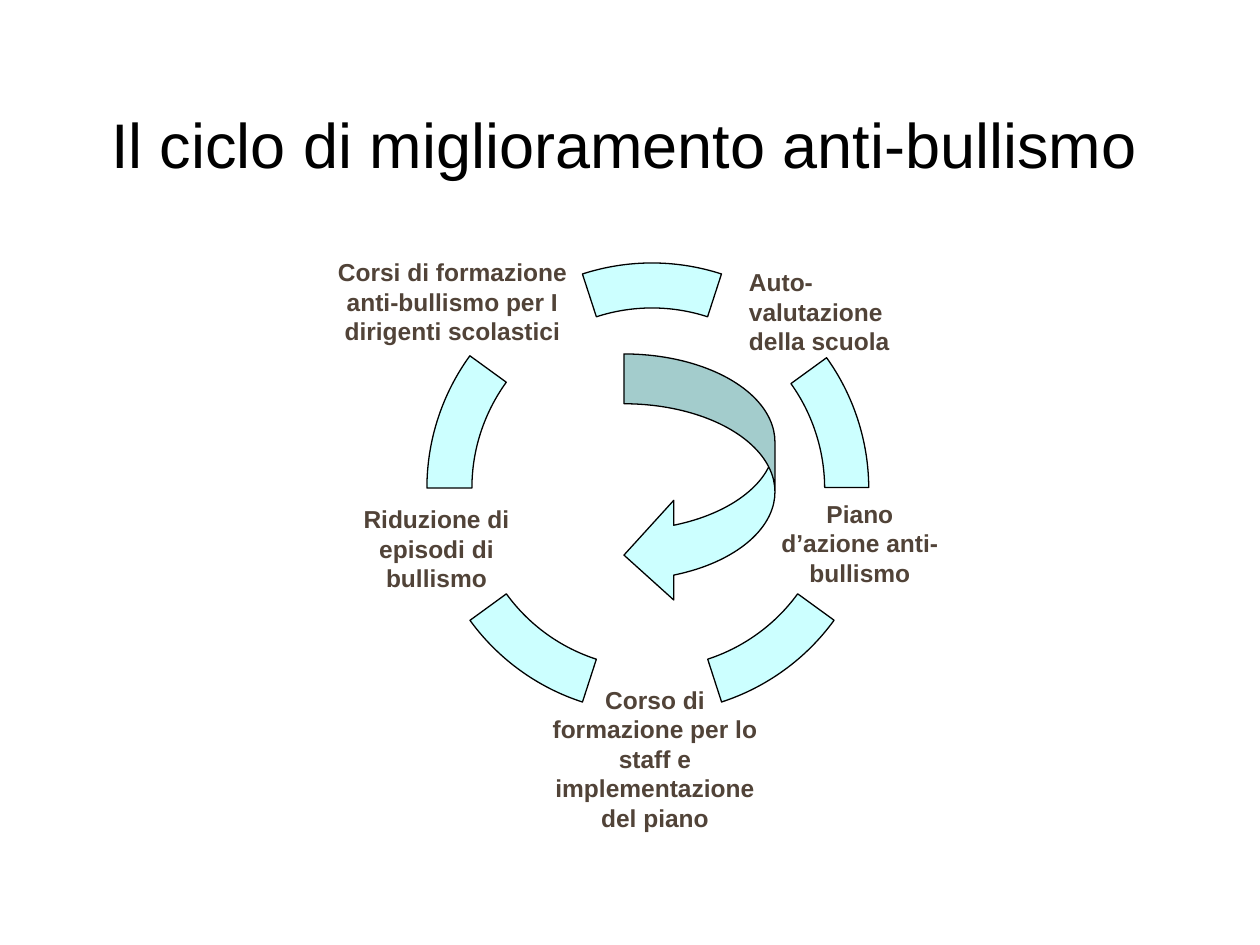
from pptx import Presentation
from pptx.dml.color import RGBColor
from pptx.enum.shapes import MSO_SHAPE
from pptx.enum.text import MSO_ANCHOR, PP_ALIGN
from pptx.util import Emu, Pt

PX = 914400 / 126
BLACK = RGBColor(0x00, 0x00, 0x00)
BROWN = RGBColor(0x51, 0x43, 0x38)
PALE_CYAN = RGBColor(0xCC, 0xFF, 0xFF)
BLOCK_ARC = MSO_SHAPE.BLOCK_ARC
CURVED_ARROW = MSO_SHAPE.CURVED_LEFT_ARROW
MIDDLE = MSO_ANCHOR.MIDDLE
LEFT, CENTER = PP_ALIGN.LEFT, PP_ALIGN.CENTER

ARC_START, ARC_END, ARC_THICKNESS = 252, 288, 0.1
ARC_STEP = 72
RING_BOX = (427, 263, 450, 450)
RIGHT_ARC_BOX = (425, 267, 446, 441)
ARC_BOXES = [RING_BOX, RIGHT_ARC_BOX, RING_BOX, RING_BOX, RING_BOX]

STAGES = [
    ("Auto-valutazione della scuola", (740, 277, 189, 69), LEFT),
    ("Corso di formazione per lo staff e implementazione del piano",
     (532, 723, 246, 71), CENTER),
    ("Corsi di formazione anti-bullismo per I dirigenti scolastici",
     (322, 263, 261, 77), CENTER),
    ("Piano d’azione anti-bullismo", (771, 484, 178, 118), CENTER),
    ("Riduzione di episodi di bullismo", (344, 510, 185, 77), CENTER),
]


def px(length):
    return Emu(round(length * PX))


def angle(degrees):
    """Convert degrees to the normalized value of an angle adjustment."""
    return degrees * 60000 / 100000


class CycleSlide:
    font = "Arial"
    line_width = Pt(0.75)

    def __init__(self, slide):
        self.shapes = slide.shapes

    def text(self, words, box, size, color, bold=False, align=CENTER, insets=(9, 5)):
        frame = self.shapes.add_textbox(*map(px, box)).text_frame
        frame.word_wrap = True
        frame.vertical_anchor = MIDDLE
        frame.margin_left = frame.margin_right = px(insets[0])
        frame.margin_top = frame.margin_bottom = px(insets[1])
        frame.text = words
        paragraph = frame.paragraphs[0]
        paragraph.alignment = align
        font = paragraph.runs[0].font
        font.name, font.size, font.bold = self.font, Pt(size), bold
        font.color.rgb = color

    def shape(self, preset, box, adjustments, rotation=0):
        shape = self.shapes.add_shape(preset, *map(px, box))
        for index, value in enumerate(adjustments):
            shape.adjustments[index] = value
        shape.rotation = rotation
        shape.shadow.inherit = False
        shape.fill.solid()
        shape.fill.fore_color.rgb = PALE_CYAN
        shape.line.color.rgb = BLACK
        shape.line.width = self.line_width


def main():
    prs = Presentation()
    prs.slide_width, prs.slide_height = px(1260), px(945)
    cycle = CycleSlide(prs.slides.add_slide(prs.slide_layouts[6]))

    cycle.text("Il ciclo di miglioramento anti-bullismo", (57, 64, 1134, 158),
               36, BLACK, insets=(13, 6))
    arc = (angle(ARC_START), angle(ARC_END), ARC_THICKNESS)
    for index, box in enumerate(ARC_BOXES):
        cycle.shape(BLOCK_ARC, box, arc, index * ARC_STEP)
    for words, box, align in STAGES:
        cycle.text(words, box, 14, BROWN, bold=True, align=align)
    cycle.shape(CURVED_ARROW, (624, 354, 151, 251), (0.33, 0.66, 0.33))

    prs.save("out.pptx")


if __name__ == "__main__":
    main()
